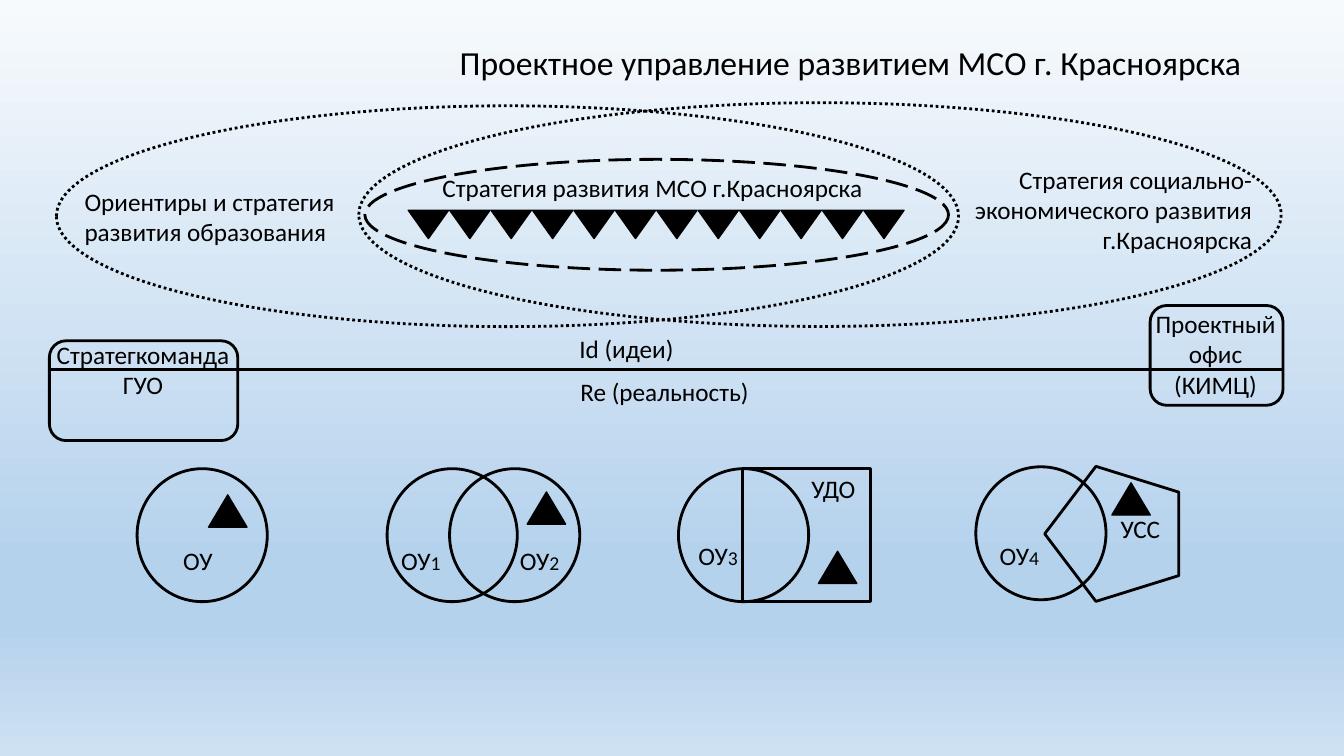
from lxml import etree
from pptx import Presentation
from pptx.dml.color import RGBColor
from pptx.enum.dml import MSO_LINE
from pptx.enum.shapes import MSO_CONNECTOR, MSO_SHAPE
from pptx.enum.text import MSO_ANCHOR, PP_ALIGN
from pptx.oxml.ns import qn
from pptx.util import Pt

BLACK = RGBColor(0x00, 0x00, 0x00)
SKY_STOPS = [
    (0, RGBColor(0xF7, 0xFA, 0xFD)),
    (74, RGBColor(0xB5, 0xD2, 0xEC)),
    (83, RGBColor(0xB5, 0xD2, 0xEC)),
    (100, RGBColor(0xCE, 0xE1, 0xF2)),
]
FONT = "Calibri"
LEFT, CENTER, RIGHT = PP_ALIGN.LEFT, PP_ALIGN.CENTER, PP_ALIGN.RIGHT
MIDDLE = MSO_ANCHOR.MIDDLE
DOTTED, LONG_DASH = MSO_LINE.ROUND_DOT, MSO_LINE.LONG_DASH
ELLIPSE, RECTANGLE = MSO_SHAPE.OVAL, MSO_SHAPE.RECTANGLE
ROUNDED, PENTAGON = MSO_SHAPE.ROUNDED_RECTANGLE, MSO_SHAPE.REGULAR_PENTAGON
TRIANGLE = MSO_SHAPE.ISOSCELES_TRIANGLE
STRAIGHT = MSO_CONNECTOR.STRAIGHT

CIRCLE_WIDTH, CIRCLE_HEIGHT = 93, 95
GOAL_COUNT, GOAL_LEFT, GOAL_STEP = 12, 291.6, 29.58


def paint_background(slide):
    fill = slide.background.fill
    fill.gradient()
    fill.gradient_angle = 270
    stops = slide.element.find(".//" + qn("a:gsLst"))
    for stop in list(stops):
        stops.remove(stop)
    for percent, color in SKY_STOPS:
        stop = etree.SubElement(stops, qn("a:gs"), pos=str(percent * 1000))
        etree.SubElement(stop, qn("a:srgbClr"), val=str(color))


def write_text(shape, text, size=18, align=LEFT, index=""):
    """Fill a shape with one paragraph; index is a smaller trailing number."""
    shape.text_frame.word_wrap = True
    paragraph = shape.text_frame.paragraphs[0]
    paragraph.alignment = align
    for part, part_size in ((text, size), (index, 14)):
        if part:
            run = paragraph.add_run()
            run.text = part
            run.font.name = FONT
            run.font.size = Pt(part_size)
            run.font.color.rgb = BLACK
    return paragraph


def add_text(slide, text, left, top, width, height=29, **text_format):
    box = slide.shapes.add_textbox(Pt(left), Pt(top), Pt(width), Pt(height))
    write_text(box, text, **text_format)


def add_outline(slide, kind, left, top, width, height, dash=None, rotation=0):
    shape = slide.shapes.add_shape(kind, Pt(left), Pt(top), Pt(width), Pt(height))
    shape.shadow.inherit = False
    shape.fill.background()
    shape.line.color.rgb = BLACK
    shape.line.width = Pt(2)
    shape.rotation = rotation
    if dash is not None:
        shape.line.dash_style = dash
    return shape


def add_triangle(slide, left, top, width=27.4, height=23, rotation=0):
    shape = add_outline(slide, TRIANGLE, left, top, width, height, rotation=rotation)
    shape.fill.solid()
    shape.fill.fore_color.rgb = BLACK
    shape.line.width = Pt(1)


def add_circle(slide, left, top=334.8):
    add_outline(slide, ELLIPSE, left, top, CIRCLE_WIDTH, CIRCLE_HEIGHT)


def add_axis(slide, left, right, top):
    axis = slide.shapes.add_connector(STRAIGHT, Pt(left), Pt(top), Pt(right), Pt(top))
    axis.line.color.rgb = BLACK
    axis.line.width = Pt(2)
    etree.SubElement(axis.element.spPr, qn("a:effectLst"))


def add_title(slide, text):
    title = slide.shapes.title
    title.left, title.top, title.width, title.height = Pt(66), Pt(29), Pt(828), Pt(34)
    title.text_frame.vertical_anchor = MIDDLE
    write_text(title, text, size=24, align=RIGHT).line_spacing = 0.9


def add_strategies(slide):
    add_outline(slide, ELLIPSE, 256.3, 73.4, 658.8, 159.8, dash=DOTTED)
    add_text(slide, "Стратегия социально-экономического развития г.Красноярска",
             684.7, 113.8, 216.7, 94, align=RIGHT)
    add_outline(slide, ELLIPSE, 40.3, 75.6, 644.4, 157.7, dash=DOTTED)
    add_text(slide, "Ориентиры и стратегия развития образования", 53.3, 129.6, 216.7, 73)
    add_outline(slide, ELLIPSE, 260.6, 113.8, 416.9, 79.2, dash=LONG_DASH, rotation=180)
    add_text(slide, "Стратегия развития МСО г.Красноярска", 308.9, 119.5, 322.6, 51)
    for number in range(GOAL_COUNT):
        add_triangle(slide, GOAL_LEFT + number * GOAL_STEP, 150.2,
                     width=28.8, height=20.2, rotation=180)


def add_ideas_and_reality(slide):
    add_text(slide, "Id (идеи)", 406.8, 234.7, 138)
    add_text(slide, "Re (реальность)", 407.5, 265, 137)
    add_axis(slide, 34.6, 915.8, 264.2)
    add_text(slide, "Проектный офис (КИМЦ)", 815.8, 216.7, 105, 73, align=CENTER)
    add_outline(slide, ROUNDED, 821.5, 218.2, 95, 71.3)
    add_text(slide, "Стратегкоманда ГУО", 30.2, 239, 144, 51, align=CENTER)
    add_outline(slide, ROUNDED, 35.3, 243.4, 134.6, 71.3)


def add_institutions(slide):
    # Single institution
    add_circle(slide, 97.9)
    add_text(slide, "ОУ", 123.8, 385.9, 41)
    add_triangle(slide, 149, 353.5)

    # Two institutions
    add_circle(slide, 276.5)
    add_text(slide, "ОУ", 279.4, 385.9, 49.7, index="1")
    add_circle(slide, 321.1)
    add_text(slide, "ОУ", 364.3, 385.9, 47, index="2")
    add_triangle(slide, 376.6, 351.4)

    # Institution with additional education
    add_circle(slide, 484.6)
    add_text(slide, "ОУ", 491.8, 382.3, 47, index="3")
    add_outline(slide, RECTANGLE, 530.6, 334.8, 91.4, CIRCLE_HEIGHT)
    add_text(slide, "УДО", 572.4, 334.8, 49.7)
    add_triangle(slide, 584.6, 393.8)

    # Institution with social sphere
    add_circle(slide, 697, top=333.4)
    add_text(slide, "ОУ", 707, 382.3, 47, index="4")
    add_outline(slide, PENTAGON, 745.9, 333.4, 96.5, 95.8, rotation=270)
    add_text(slide, "УСС", 793.4, 362.9, 48.2)
    add_triangle(slide, 794.2, 344.9)


def main():
    presentation = Presentation()
    presentation.slide_width, presentation.slide_height = Pt(960), Pt(540)
    slide = presentation.slides.add_slide(presentation.slide_layouts[5])
    paint_background(slide)
    add_title(slide, "Проектное управление развитием МСО г. Красноярска")
    add_strategies(slide)
    add_ideas_and_reality(slide)
    add_institutions(slide)
    presentation.save("out.pptx")


if __name__ == "__main__":
    main()
